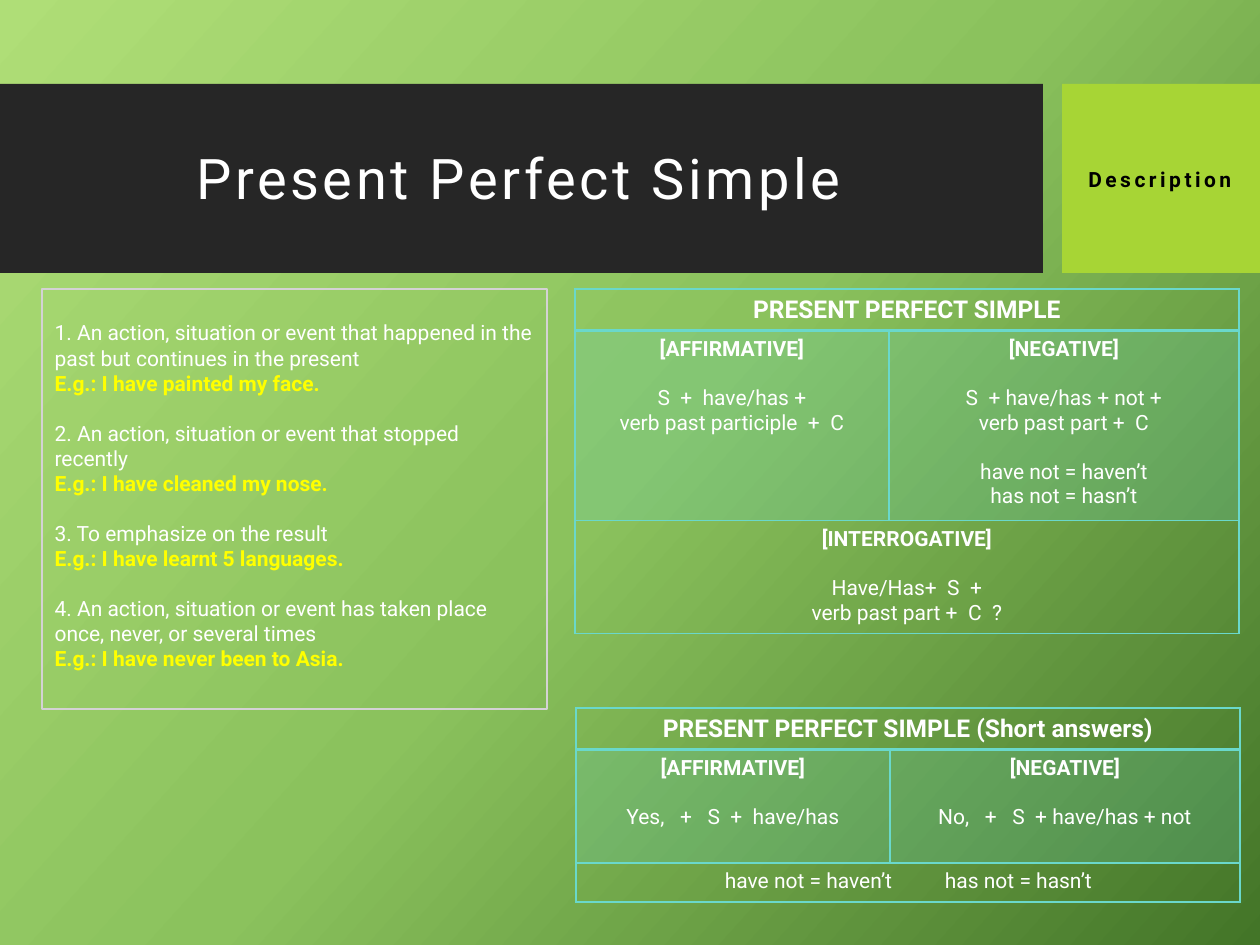
from copy import deepcopy

from pptx import Presentation, util as u
from pptx.dml.color import RGBColor
from pptx.enum import shapes, text
from pptx.oxml import parse_xml
from pptx.oxml.ns import nsdecls, qn

PX = u.Inches(1) / 126
FONT = "Roboto"
WHITE, YELLOW, BLACK, TEAL = "FFFFFF", "FFFF00", "000000", "6AD8CB"
GAP = 14

BACKGROUND = [(0, "AFDE77"), (0.5, "8BC25D"), (1, "437528")]
BANDS = [((0, 84, 1043, 189), "262626"), ((1062, 84, 198, 189), "A7D535")]
TITLE = ("Present Perfect Simple", (-4, 86, 1046, 190), 32, WHITE, False)
TAG = ("Description", (1060, 86, 200, 190), 12, BLACK, True)
USES_BOX = (42, 289, 505, 420)
USES = [
    ("1. An action, situation or event that happened in the past but continues in the present",
     "E.g.: I have painted my face."),
    ("2. An action, situation or event that stopped recently",
     "E.g.: I have cleaned my nose."),
    ("3. To emphasize on the result",
     "E.g.: I have learnt 5 languages."),
    ("4. An action, situation or event has taken place once, never, or several times",
     "E.g.: I have never been to Asia."),
]

COLUMNS = [314, 350]
FORMS = [
    [("PRESENT PERFECT SIMPLE", [])],
    [("[AFFIRMATIVE]", [["S  +  have/has +", "verb past participle  +  C"]]),
     ("[NEGATIVE]", [["S  + have/has + not +", "verb past part +  C"],
                     ["have not = haven’t", "has not = hasn’t"]])],
    [("[INTERROGATIVE]", [["Have/Has+  S  +", "verb past part +  C  ?"]])],
]
SHORT_ANSWERS = [
    [("PRESENT PERFECT SIMPLE (Short answers)", [])],
    [("[AFFIRMATIVE]", [["Yes,   +   S  +  have/has"]]),
     ("[NEGATIVE]", [["No,   +   S  + have/has + not"]])],
    [("", [["have not = haven’t\thas not = hasn’t"]])],
]
TABLES = [((575, 289), [41, 190, 113], FORMS),
          ((576, 708), [42, 113, 39], SHORT_ANSWERS)]


def px(n):
    return u.Emu(round(n * PX))


def box(values):
    return [px(v) for v in values]


def rgb(value):
    return RGBColor.from_string(value)


def place(sp, values):
    sp.left, sp.top, sp.width, sp.height = box(values)


def style(p, size, color, bold):
    f = p.font
    f.name, f.size, f.bold = FONT, u.Pt(size), bold
    f.color.rgb = rgb(color)


def write(tf, lines):
    for i, (words, size, color, bold, before, align) in enumerate(lines):
        p = tf.paragraphs[0] if i == 0 else tf.add_paragraph()
        p.text = words
        p.alignment = align
        p.space_before = u.Pt(before)
        style(p, size, color, bold)


def heading(sp, content):
    words, place_at, size, color, bold = content
    place(sp, place_at)
    tf = sp.text_frame
    tf.word_wrap = True
    tf.auto_size = text.MSO_AUTO_SIZE.NONE
    tf.vertical_anchor = text.MSO_ANCHOR.MIDDLE
    write(tf, [(words, size, color, bold, 0, text.PP_ALIGN.CENTER)])
    p = tf.paragraphs[0]
    p.line_spacing = 0.9
    p.space_after = u.Pt(6)
    p.runs[0].font._element.set("spc", "200")


def border(cell, row):
    widths = {"L": 1, "R": 1, "T": 2 if row == 1 else 1, "B": 2 if row == 0 else 1}
    tcPr = cell._tc.get_or_add_tcPr()
    for i, (side, width) in enumerate(widths.items()):
        tcPr.insert(i, parse_xml(
            f'<a:ln{side} {nsdecls("a")} w="{u.Pt(width)}"><a:solidFill>'
            f'<a:srgbClr val="{TEAL}"/></a:solidFill></a:ln{side}>'))


def tint(cell):
    cell.fill.solid()
    cell.fill.fore_color.rgb = rgb(TEAL)
    color = cell._tc.tcPr.find(".//" + qn("a:srgbClr"))
    color.append(parse_xml(f'<a:alpha {nsdecls("a")} val="20000"/>'))


def cell_lines(head, groups, size):
    center = text.PP_ALIGN.CENTER
    lines = [(head, size, WHITE, True, 0, center)] if head else []
    for group in groups:
        for i, words in enumerate(group):
            before = GAP if lines and i == 0 else 0
            lines.append((words, size, WHITE, False, before, center))
    return lines


def tab_pair(cell):
    cell.margin_left = px(149)
    p = cell.text_frame.paragraphs[0]
    p.alignment = text.PP_ALIGN.LEFT
    tabs = parse_xml(f'<a:tabLst {nsdecls("a")}><a:tab pos="{px(220)}" algn="l"/></a:tabLst>')
    p._p.pPr.find(qn("a:defRPr")).addprevious(tabs)


def grammar_table(s, origin, heights, rows):
    size = (sum(COLUMNS), sum(heights))
    tbl = s.shapes.add_table(len(rows), len(COLUMNS), *box(origin + size)).table
    tbl.first_row = tbl.horz_banding = False
    for col, width in zip(tbl.columns, COLUMNS):
        col.width = px(width)
    for r, (height, row) in enumerate(zip(heights, rows)):
        tbl.rows[r].height = px(height)
        if len(row) == 1:
            tbl.cell(r, 0).merge(tbl.cell(r, 1))
        for c, (head, groups) in enumerate(row):
            cell = tbl.cell(r, c)
            write(cell.text_frame, cell_lines(head, groups, 14 if r == 0 else 12))
            if "\t" in cell.text_frame.text:
                tab_pair(cell)
        for c in range(len(COLUMNS)):
            cell = tbl.cell(r, c)
            if len(row) == 2:
                tint(cell)
            else:
                cell.fill.background()
            border(cell, r)


def main():
    prs = Presentation()
    prs.slide_width, prs.slide_height = px(1260), px(945)
    s = prs.slides.add_slide(prs.slide_layouts[1])

    fill = s.background.fill
    fill.gradient()
    fill.gradient_angle = 318
    gs_list = s.element.find(".//" + qn("a:gsLst"))
    gs_list.append(deepcopy(gs_list[0]))
    for stop, (position, color) in zip(fill.gradient_stops, BACKGROUND):
        stop.position = position
        stop.color.rgb = rgb(color)

    for i, (place_at, color) in enumerate(BANDS):
        sp = s.shapes.add_shape(shapes.MSO_SHAPE.RECTANGLE, *box(place_at))
        sp.shadow.inherit = False
        sp.fill.solid()
        sp.fill.fore_color.rgb = rgb(color)
        sp.line.fill.background()
        sp._element.getparent().insert(2 + i, sp._element)

    heading(s.shapes.title, TITLE)
    heading(s.shapes.add_textbox(*box(TAG[1])), TAG)

    uses = s.placeholders[1]
    place(uses, USES_BOX)
    uses.line.color.rgb = rgb("D4D2D4")
    uses.line.width = u.Pt(0.75)
    tf = uses.text_frame
    tf.auto_size = text.MSO_AUTO_SIZE.NONE
    tf.margin_top = px(31)
    left = text.PP_ALIGN.LEFT
    lines = []
    for i, (use, example) in enumerate(USES):
        lines += [(use, 12, WHITE, False, GAP if i else 0, left),
                  (example, 12, YELLOW, True, 0, left)]
    write(tf, lines)
    for p in tf.paragraphs:
        pPr = p._p.pPr
        pPr.set("marL", "0")
        pPr.set("indent", "0")
        pPr.find(qn("a:defRPr")).addprevious(parse_xml(f'<a:buNone {nsdecls("a")}/>'))

    for origin, heights, rows in TABLES:
        grammar_table(s, origin, heights, rows)

    prs.save("out.pptx")


if __name__ == "__main__":
    main()
